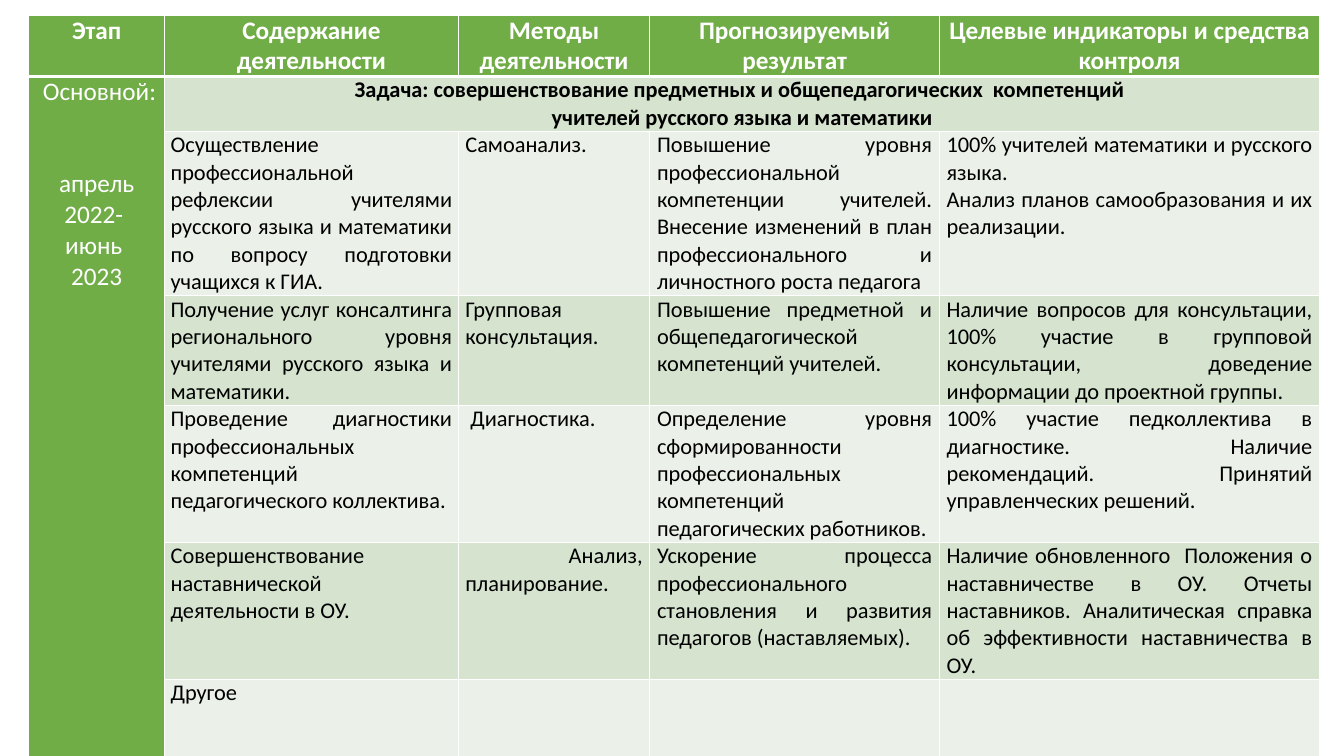
from dataclasses import dataclass

from lxml.etree import SubElement
from pptx import Presentation
from pptx.dml.color import RGBColor
from pptx.enum.text import PP_ALIGN as Align
from pptx.oxml.ns import qn
from pptx.util import Cm, Pt


@dataclass(frozen=True)
class Theme:
    """Colours, type sizes and line widths of the slide."""
    font: str = "Calibri"
    green: str = "70AD47"
    bands: tuple = ("D5E3CF", "EBF1E9")
    white: str = "FFFFFF"
    black: str = "000000"
    head_size: int = 18
    body_size: int = 16
    rule: int = 1
    head_rule: int = 3


THEME = Theme()
COLUMN_SHARES = (1.35, 2.91, 1.9, 2.87, 3.77)
ROW_SHARES = (0.56, 0.5, 1.5, 1, 1.25, 1.25, 0.79)
HEADINGS = (
    "Этап",
    "Содержание деятельности",
    "Методы деятельности",
    "Прогнозируемый результат",
    "Целевые индикаторы и средства контроля",
)
STAGE = " Основной: \nапрель 2022- \nиюнь \n2023"
TASK = (
    "Задача: совершенствование предметных и общепедагогических  компетенций \n"
    "учителей русского языка и математики"
)
ACTIVITIES = (
    (
        "Осуществление профессиональной рефлексии учителями русского языка "
        "и математики по вопросу подготовки учащихся к ГИА.",
        "Самоанализ.",
        "Повышение уровня профессиональной компетенции учителей. Внесение "
        "изменений в план профессионального и личностного роста педагога ",
        "100% учителей математики и русского языка. \n"
        "Анализ планов самообразования и их реализации.",
    ),
    (
        "Получение услуг консалтинга регионального уровня учителями "
        "русского языка и математики.",
        "Групповая консультация.",
        "Повышение предметной и общепедагогической компетенций учителей.",
        "Наличие вопросов для консультации, 100% участие в групповой "
        "консультации, доведение информации до проектной группы.",
    ),
    (
        "Проведение диагностики профессиональных компетенций "
        "педагогического коллектива.",
        " Диагностика. ",
        "Определение уровня сформированности профессиональных компетенций "
        "педагогических работников.",
        "100% участие педколлектива в диагностике.  Наличие рекомендаций. "
        "Принятий управленческих решений.",
    ),
    (
        "Совершенствование наставнической деятельности в ОУ.",
        " Анализ, планирование.",
        "Ускорение процесса профессионального становления и развития "
        "педагогов (наставляемых).",
        "Наличие обновленного  Положения о наставничестве в ОУ. Отчеты "
        "наставников. Аналитическая справка об эффективности "
        "наставничества в ОУ.",
    ),
    ("Другое", "", "", ""),
)


def style_cell(cell, fill, top, bottom, inset):
    """Set the margins, white borders and fill of a cell."""
    cell.margin_left = cell.margin_right = Cm(inset)
    cell.margin_top = cell.margin_bottom = 0
    properties = cell._tc.get_or_add_tcPr()
    edges = (("L", THEME.rule), ("R", THEME.rule), ("T", top), ("B", bottom))
    for side, width in edges:
        line = SubElement(properties, qn(f"a:ln{side}"), w=str(Pt(width)))
        paint = SubElement(line, qn("a:solidFill"))
        SubElement(paint, qn("a:srgbClr"), val=THEME.white)
    cell.fill.solid()
    cell.fill.fore_color.rgb = RGBColor.from_string(fill)


def write(cell, text, size, color, bold=False, align=Align.CENTER):
    """Write each line of the text as a paragraph of the cell."""
    frame = cell.text_frame
    for index, words in enumerate(text.split("\n")):
        paragraph = frame.add_paragraph() if index else frame.paragraphs[0]
        paragraph.alignment = align
        if not words:
            continue
        run = paragraph.add_run()
        run.text = words
        run.font.name = THEME.font
        run.font.size = Pt(size)
        run.font.bold = bold
        run.font.color.rgb = RGBColor.from_string(color)


def fill_backgrounds(table):
    """Colour the heading row, the stage column and the banded rows."""
    last_column = len(COLUMN_SHARES)
    for row in range(len(ROW_SHARES)):
        for column in range(last_column):
            green = row == 0 or column == 0
            fill = THEME.green if green else THEME.bands[(row - 1) % 2]
            top = THEME.head_rule if row == 1 else THEME.rule
            bottom = THEME.head_rule if row == 0 else THEME.rule
            inset = 0.15 if column == 1 and row > 1 else 0.18
            style_cell(table.cell(row, column), fill, top, bottom, inset)


def add_plan(slide, left, top, width, height):
    """Place the plan of activities in the given box."""
    rows, columns = len(ROW_SHARES), len(COLUMN_SHARES)
    table = slide.shapes.add_table(rows, columns, left, top, width, height).table
    for column, share in zip(table.columns, COLUMN_SHARES):
        column.width = int(width * share / sum(COLUMN_SHARES))
    for row, share in zip(table.rows, ROW_SHARES):
        row.height = int(height * share / sum(ROW_SHARES))
    fill_backgrounds(table)

    for column, heading in enumerate(HEADINGS):
        write(table.cell(0, column), heading, THEME.head_size, THEME.white, True)

    stage = table.cell(1, 0)
    stage.merge(table.cell(rows - 1, 0))
    write(stage, STAGE, THEME.head_size, THEME.white)
    stage.text_frame.paragraphs[1].space_before = Pt(44)

    task = table.cell(1, 1)
    task.merge(table.cell(1, columns - 1))
    write(task, TASK, THEME.body_size, THEME.black, True)

    for row, activity in enumerate(ACTIVITIES, start=2):
        for column, text in enumerate(activity, start=1):
            write(table.cell(row, column), text, THEME.body_size, THEME.black,
                  align=Align.JUSTIFY)


def main():
    """Build and save the presentation."""
    deck = Presentation()
    deck.slide_width, deck.slide_height = Cm(33.87), Cm(19.05)
    slide = deck.slides.add_slide(deck.slide_layouts[6])
    add_plan(slide, Cm(0.72), Cm(0.38), Cm(32.54), Cm(17.4))
    deck.save("out.pptx")


if __name__ == "__main__":
    main()
